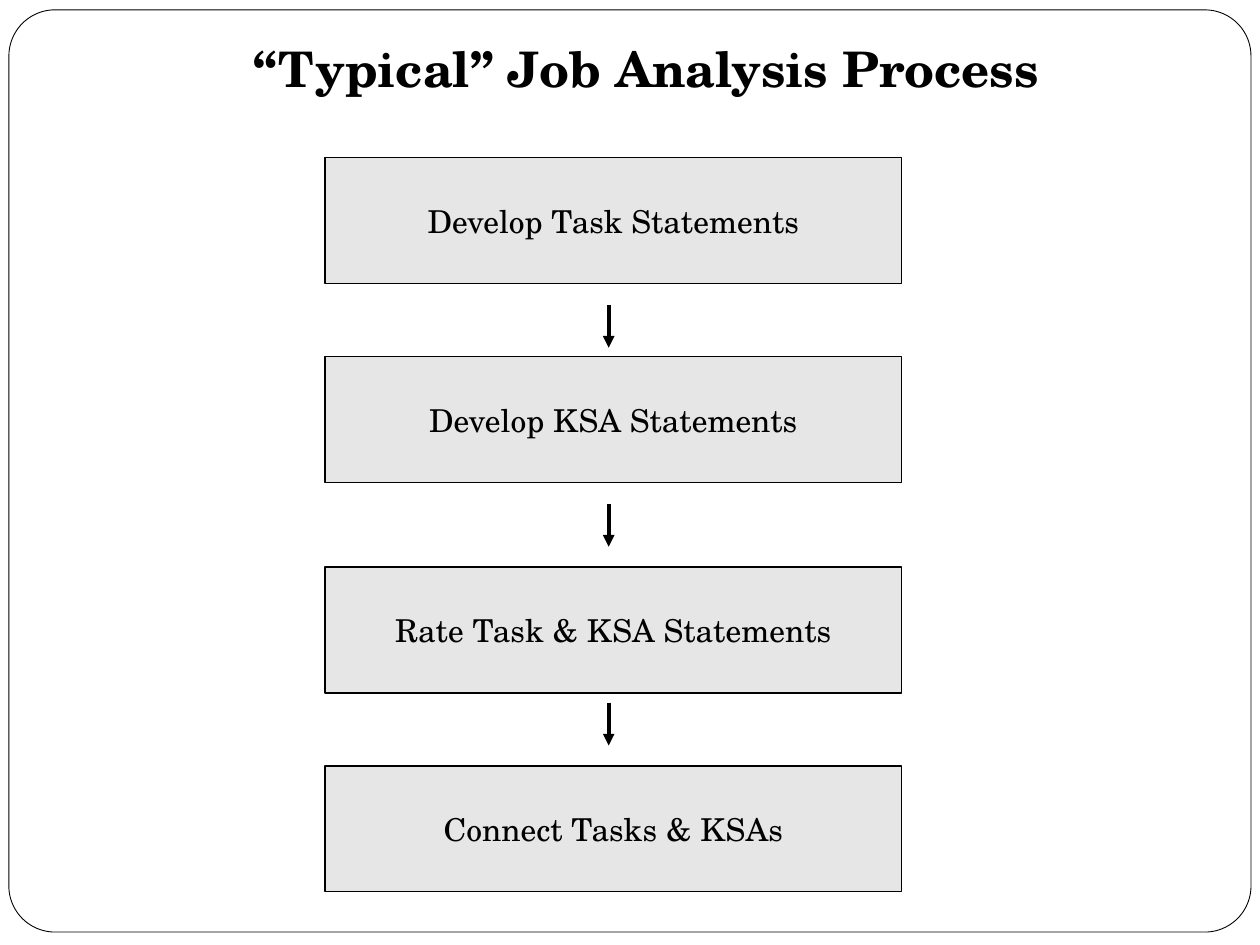
from dataclasses import dataclass

import lxml.etree
import pptx
import pptx.dml.color
import pptx.enum.shapes
import pptx.enum.text
import pptx.oxml.ns
import pptx.util
from pptx.util import Cm, Pt


@dataclass(frozen=True)
class Theme:
    font: str = "TeX Gyre Schola"
    ink: str = "000000"
    paper: str = "FFFFFF"
    box: str = "E6E6E6"
    title_size: float = 28
    step_size: float = 18
    frame_line: float = 0.5
    box_line: float = 0.75
    arrow_line: float = 2.25


@dataclass(frozen=True)
class Step:
    text: str
    top: float


THEME = Theme()
TITLE = "“Typical” Job Analysis Process"
STEPS = [
    Step("Develop Task Statements", 3.18),
    Step("Develop KSA Statements", 7.19),
    Step("Rate Task & KSA Statements", 11.43),
    Step("Connect Tasks & KSAs", 15.44),
]
BOX_LEFT, BOX_WIDTH, BOX_HEIGHT = 6.55, 11.63, 2.54
ARROW_X, ARROW_TOP, ARROW_PITCH, ARROW_LENGTH = 12.27, 6.15, 4.01, 0.86


def rgb(value: str) -> pptx.dml.color.RGBColor:
    return pptx.dml.color.RGBColor.from_string(value)


def add_panel(slide, kind, left: float, top: float, width: float,
              height: float, fill: str, line: float):
    sp = slide.shapes.add_shape(kind, Cm(left), Cm(top), Cm(width), Cm(height))
    sp.shadow.inherit = False
    sp.fill.solid()
    sp.fill.fore_color.rgb = rgb(fill)
    sp.line.color.rgb = rgb(THEME.ink)
    sp.line.width = Pt(line)
    return sp


def set_text(sp, text: str, size: float, bold: bool = False) -> None:
    tf = sp.text_frame
    tf.text = text
    p = tf.paragraphs[0]
    p.alignment = pptx.enum.text.PP_ALIGN.CENTER
    r = p.runs[0]
    r.font.name = THEME.font
    r.font.size = Pt(size)
    r.font.bold = bold
    r.font.color.rgb = rgb(THEME.ink)


def add_step(slide, step: Step) -> None:
    sp = add_panel(slide, pptx.enum.shapes.MSO_SHAPE.RECTANGLE, BOX_LEFT,
                   step.top, BOX_WIDTH, BOX_HEIGHT, THEME.box, THEME.box_line)
    set_text(sp, step.text, THEME.step_size)
    sp.text_frame.word_wrap = False
    sp.text_frame.vertical_anchor = pptx.enum.text.MSO_ANCHOR.MIDDLE


def add_arrow(slide, top: float) -> None:
    cx = slide.shapes.add_connector(
        pptx.enum.shapes.MSO_CONNECTOR.STRAIGHT,
        Cm(ARROW_X), Cm(top), Cm(ARROW_X), Cm(top + ARROW_LENGTH))
    cx.line.color.rgb = rgb(THEME.ink)
    cx.line.width = Pt(THEME.arrow_line)
    qn = pptx.oxml.ns.qn
    ln = cx.line.fill and cx.element.spPr.find(qn("a:ln"))
    lxml.etree.SubElement(ln, qn("a:tailEnd"), type="triangle")
    lxml.etree.SubElement(cx.element.spPr, qn("a:effectLst"))


def main() -> None:
    prs = pptx.Presentation()
    prs.slide_width, prs.slide_height = Cm(25.4), Cm(19.05)
    slide = prs.slides.add_slide(prs.slide_layouts[5])

    # Title
    title = slide.shapes.title
    title.left, title.top = Cm(2.97), Cm(0.64)
    title.width, title.height = Cm(20.12), Cm(1.45)
    set_text(title, TITLE, THEME.title_size, bold=True)
    title.text_frame.word_wrap = True
    title.text_frame.auto_size = pptx.enum.text.MSO_AUTO_SIZE.NONE
    title.text_frame.vertical_anchor = pptx.enum.text.MSO_ANCHOR.TOP

    # Rounded frame, behind the title
    frame = add_panel(slide, pptx.enum.shapes.MSO_SHAPE.ROUNDED_RECTANGLE,
                      0.18, 0.2, 25.04, 18.59, THEME.paper, THEME.frame_line)
    frame.adjustments[0] = 0.05
    title.element.addprevious(frame.element)

    # Process steps and the arrows between them
    for step in STEPS:
        add_step(slide, step)
    for i in range(len(STEPS) - 1):
        add_arrow(slide, ARROW_TOP + i * ARROW_PITCH)

    prs.save("out.pptx")


if __name__ == "__main__":
    main()
